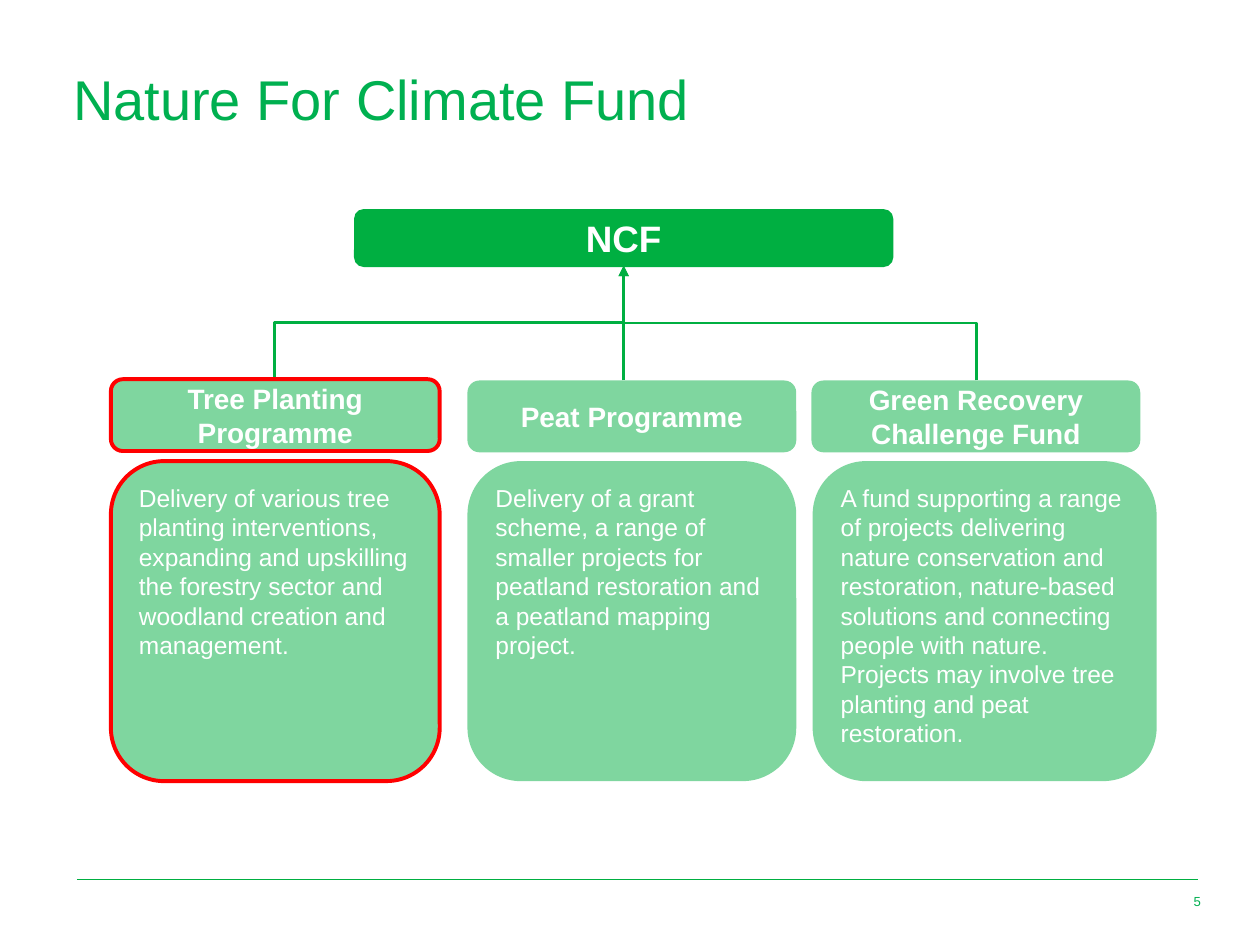
from dataclasses import dataclass

from lxml import etree
from pptx import Presentation
from pptx.dml.color import RGBColor
from pptx.enum.shapes import MSO_CONNECTOR, MSO_SHAPE
from pptx.enum.text import MSO_ANCHOR, MSO_AUTO_SIZE, PP_ALIGN
from pptx.oxml.ns import qn
from pptx.util import Inches, Pt

ROUND = MSO_SHAPE.ROUNDED_RECTANGLE
STRAIGHT, ELBOW = MSO_CONNECTOR.STRAIGHT, MSO_CONNECTOR.ELBOW
TOP, MIDDLE = MSO_ANCHOR.TOP, MSO_ANCHOR.MIDDLE
LEFT, CENTER, RIGHT = PP_ALIGN.LEFT, PP_ALIGN.CENTER, PP_ALIGN.RIGHT
NO_FIT = MSO_AUTO_SIZE.NONE
TITLE_ONLY = 5


@dataclass(frozen=True)
class Theme:
    font: str = "Arial"
    green: str = "00AF41"
    title: str = "00B050"
    white: str = "FFFFFF"
    red: str = "FF0000"
    title_size: float = 32
    fund_size: float = 21
    head_size: float = 16
    body_size: float = 14
    page_size: float = 7.5
    thin: float = 0.5
    link: float = 1.5
    frame: float = 2.25


class Deck:
    def __init__(self, theme, slide):
        self.theme = theme
        self.slide = slide

    def fill_text(self, frame, text, size, color, align, anchor, bold=False):
        frame.word_wrap = True
        frame.auto_size = NO_FIT
        frame.vertical_anchor = anchor
        para = frame.paragraphs[0]
        para.alignment = align
        run = para.add_run()
        run.text = text
        run.font.name = self.theme.font
        run.font.size = Pt(size)
        run.font.bold = bold
        run.font.color.rgb = RGBColor.from_string(color)
        return para

    def title(self, text, box):
        shape = self.slide.shapes.title
        shape.left, shape.top, shape.width, shape.height = map(Inches, box)
        para = self.fill_text(shape.text_frame, text, self.theme.title_size,
                              self.theme.title, LEFT, TOP)
        para.line_spacing = 0.9

    def label(self, text, box):
        shape = self.slide.shapes.add_textbox(*map(Inches, box))
        self.fill_text(shape.text_frame, text, self.theme.page_size,
                       self.theme.title, RIGHT, MIDDLE)

    def card(self, text, box, size, align=CENTER, anchor=MIDDLE,
             bold=True, alpha=None, framed=False):
        shape = self.slide.shapes.add_shape(ROUND, *map(Inches, box))
        shape.shadow.inherit = False
        shape.fill.solid()
        shape.fill.fore_color.rgb = RGBColor.from_string(self.theme.green)
        if alpha:
            color = shape._element.spPr.find(qn("a:solidFill"))[0]
            etree.SubElement(color, qn("a:alpha")).set("val", str(alpha * 1000))
        if framed:
            shape.line.color.rgb = RGBColor.from_string(self.theme.red)
            shape.line.width = Pt(self.theme.frame)
        else:
            shape.line.fill.background()
        self.fill_text(shape.text_frame, text, size, self.theme.white,
                       align, anchor, bold)

    def line(self, start, end, width, kind=STRAIGHT):
        link = self.slide.shapes.add_connector(kind, *map(Inches, start + end))
        link.line.color.rgb = RGBColor.from_string(self.theme.green)
        link.line.width = Pt(width)
        etree.SubElement(link._element.spPr, qn("a:effectLst"))
        return link

    def branch(self, start, end):
        (x1, y1), (x2, y2) = start, end
        mid_x, mid_y = (x1 + x2) / 2, (y1 + y2) / 2
        half_w, half_h = abs(y2 - y1) / 2, abs(x2 - x1) / 2
        link = self.line((mid_x - half_w, mid_y - half_h),
                         (mid_x + half_w, mid_y + half_h),
                         self.theme.link, ELBOW)
        props = link._element.spPr
        frame = props.find(qn("a:xfrm"))
        frame.set("flipV", "1")
        if x1 < x2:
            frame.set("flipH", "1")
        frame.set("rot", str((90 if x1 < x2 else 270) * 60000))
        stroke = props.find(qn("a:ln"))
        etree.SubElement(stroke, qn("a:tailEnd")).set("type", "triangle")


def main():
    show = Presentation()
    show.slide_width, show.slide_height = Inches(10), Inches(7.5)
    slide = show.slides.add_slide(show.slide_layouts[TITLE_ONLY])
    theme = Theme()
    deck = Deck(theme, slide)

    deck.line((0.61, 6.98), (9.51, 6.98), theme.thin)
    deck.title("Nature For Climate Fund", (0.48, 0.52, 9.04, 0.4))
    deck.label("5", (9.18, 6.95, 0.45, 0.4))

    deck.card("NCF", (2.81, 1.66, 4.28, 0.46), theme.fund_size)
    hub = (4.95, 2.11)
    deck.branch((2.18, 3.01), hub)
    deck.branch((7.75, 3.02), hub)
    deck.line((4.95, 3.02), (4.95, 2.57), theme.link)

    wide = 2.61
    funds = [
        ("Tree Planting Programme", 0.88, 3.01, 0.88, wide, True,
         "Delivery of various tree planting interventions, expanding and "
         "upskilling the forestry sector and woodland creation and management."),
        ("Peat Programme", 3.71, 3.02, 3.71, wide, False,
         "Delivery of a grant scheme, a range of smaller projects for "
         "peatland restoration and a peatland mapping project."),
        ("Green Recovery Challenge Fund", 6.44, 3.02, 6.45, 2.73, False,
         "A fund supporting a range of projects delivering nature conservation "
         "and restoration, nature-based solutions and connecting people with "
         "nature. Projects may involve tree planting and peat restoration."),
    ]
    for head, left, top, body_left, body_wide, framed, body in funds:
        deck.card(body, (body_left, 3.66, body_wide, 2.54), theme.body_size,
                  LEFT, TOP, bold=False, alpha=50, framed=framed)
        deck.card(head, (left, top, wide, 0.57), theme.head_size,
                  alpha=50, framed=framed)

    show.save("out.pptx")


if __name__ == "__main__":
    main()
